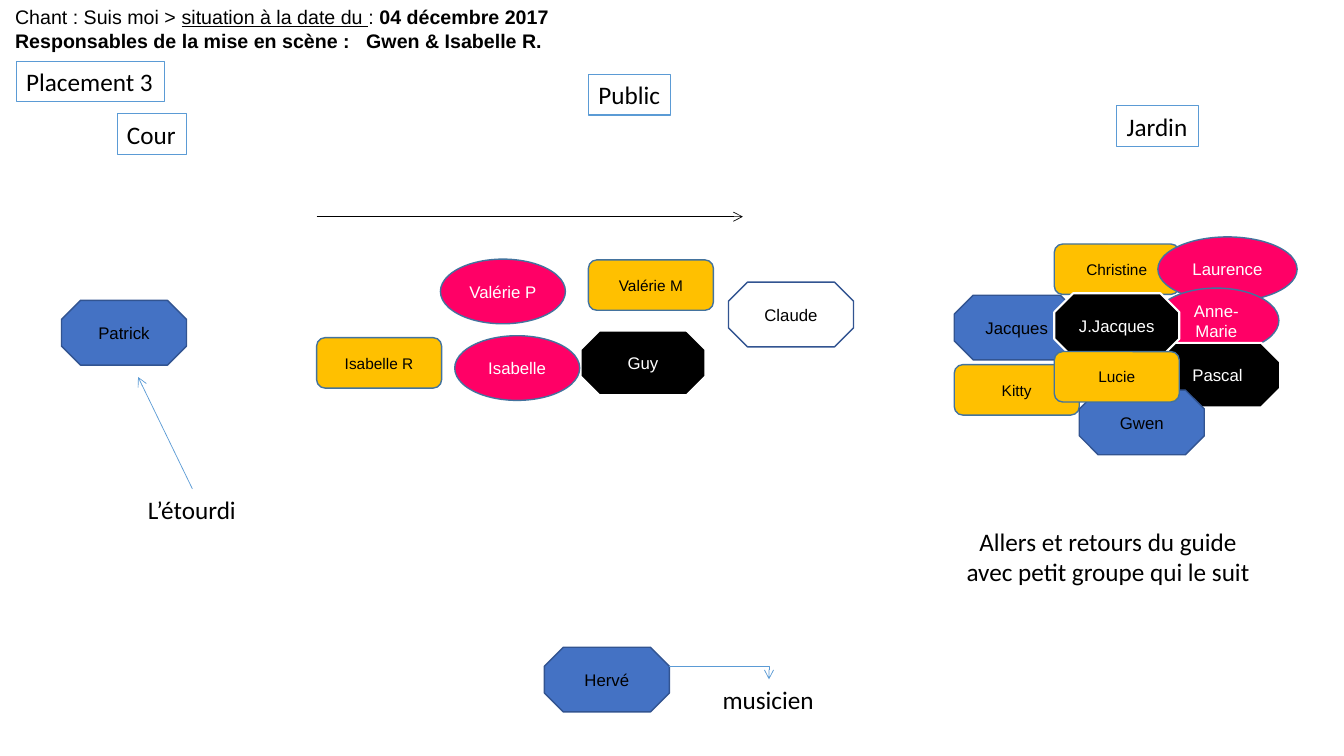
from lxml import etree
from pptx import Presentation
from pptx import util as u
from pptx.dml.color import RGBColor
from pptx.enum import shapes, text
from pptx.oxml import ns

HUES = {
    "blue": "4472C4", "navy": "325491", "steel": "43739E", "sky": "5B9BD5",
    "gold": "FFC000", "pink": "FF0066", "black": "000000", "white": "FFFFFF",
}
FORM = shapes.MSO_SHAPE

# Role: form, fill, line, line width, text colour, text size, width, height
ROLES = {
    "blue": (FORM.OCTAGON, "blue", "navy", 1, "black", 12, 3.15, 1.63),
    "dark": (FORM.OCTAGON, "black", "white", 1.5, "white", 12, 3.15, 1.63),
    "pale": (FORM.OCTAGON, "white", "navy", 1, "black", 12, 3.15, 1.63),
    "gold": (FORM.ROUNDED_RECTANGLE, "gold", "steel", 1, "black", 11, 3.15, 1.27),
    "pink": (FORM.OVAL, "pink", "steel", 1, "white", 12, 3.15, 1.63),
    "wide": (FORM.OVAL, "pink", "steel", 1, "white", 12, 3.51, 1.63),
}

# Singers from back to front: name, role, left, top
CAST = [
    ("Jacques", "blue", 24.05, 7.44),
    ("Guy", "dark", 14.63, 8.33),
    ("Christine", "gold", 26.57, 6.15),
    ("Isabelle", "pink", 11.46, 8.46),
    ("Kitty", "gold", 24.05, 9.19),
    ("Valérie M", "gold", 14.83, 6.55),
    ("Isabelle R", "gold", 7.98, 8.51),
    ("Laurence", "wide", 29.18, 5.97),
    ("Valérie P", "pink", 11.1, 6.53),
    ("Anne-Marie", "pink", 29.08, 7.26),
    ("Pascal", "dark", 29.11, 8.64),
    ("J.Jacques", "dark", 26.57, 7.39),
    ("Patrick", "blue", 1.55, 7.57),
    ("Gwen", "blue", 27.2, 9.83),
    ("Lucie", "gold", 26.57, 8.86),
    ("Claude", "pale", 18.36, 7.11),
    ("Hervé", "blue", 13.72, 16.31),
]

# Framed signs and plain notes: words, left, top, width
SIGNS = [
    ("Placement 3", 0.41, 1.55, 3.73),
    ("Public", 14.83, 1.88, 2.08),
    ("Jardin", 28.14, 2.67, 2.06),
    ("Cour", 2.95, 2.87, 1.75),
]
NOTES = [
    ("L’étourdi", 3.48, 12.32, 2.74),
    ("musicien", 17.96, 17.12, 2.84),
]


def hue(name):
    return RGBColor.from_string(HUES[name])


def add_run(para, words, size, face, tint="black", bold=None, under=None):
    run = para.add_run()
    run.text = words
    font = run.font
    font.size, font.name = u.Pt(size), face
    font.bold, font.underline = bold, under
    font.color.rgb = hue(tint)


def add_box(slide, left, top, width, height, wrap=True):
    box = slide.shapes.add_textbox(u.Cm(left), u.Cm(top), u.Cm(width), u.Cm(height))
    frame = box.text_frame
    frame.word_wrap = wrap
    frame.auto_size = text.MSO_AUTO_SIZE.SHAPE_TO_FIT_TEXT
    return box


def add_note(slide, words, left, top, width, framed=False):
    box = add_box(slide, left, top, width, 1.02, wrap=False)
    add_run(box.text_frame.paragraphs[0], words, 18, "Calibri")
    if framed:
        box.line.color.rgb = hue("sky")
        box.line.width = u.Pt(0.75)


def add_singer(slide, name, role, left, top):
    form, fill, edge, thick, tint, size, width, height = ROLES[role]
    shape = slide.shapes.add_shape(
        form, u.Cm(left), u.Cm(top), u.Cm(width), u.Cm(height))
    shape.shadow.inherit = False
    shape.fill.solid()
    shape.fill.fore_color.rgb = hue(fill)
    shape.line.color.rgb = hue(edge)
    shape.line.width = u.Pt(thick)
    frame = shape.text_frame
    frame.word_wrap = True
    frame.vertical_anchor = text.MSO_ANCHOR.MIDDLE
    para = frame.paragraphs[0]
    para.alignment = text.PP_ALIGN.CENTER
    add_run(para, name, size, "Arial", tint)


def add_arrow(slide, start, end, tint, bent=False):
    kind = shapes.MSO_CONNECTOR.ELBOW if bent else shapes.MSO_CONNECTOR.STRAIGHT
    points = [u.Cm(value) for value in start + end]
    arrow = slide.shapes.add_connector(kind, *points)
    arrow.line.color.rgb = hue(tint)
    arrow.line.width = u.Pt(0.5)
    props = arrow.element.spPr
    etree.SubElement(props.find(ns.qn("a:ln")), ns.qn("a:tailEnd"), type="arrow")
    etree.SubElement(props, ns.qn("a:effectLst"))
    if bent:  # a single corner
        props.find(ns.qn("a:prstGeom")).set("prst", "bentConnector2")


def add_header(slide):
    frame = add_box(slide, 0.13, 0, 28.96, 1.45).text_frame
    song = frame.paragraphs[0]
    add_run(song, "Chant : Suis moi > ", 14, "Arial")
    add_run(song, "situation à la date du ", 14, "Arial", under=True)
    add_run(song, ": ", 14, "Arial")
    add_run(song, "04 décembre 2017", 14, "Arial", bold=True)
    # A tab stop sets the names apart
    staff = frame.add_paragraph()
    add_run(staff, "Responsables de la mise en scène :\tGwen & Isabelle R.",
            14, "Arial", bold=True)
    stops = etree.SubElement(staff._p.get_or_add_pPr(), ns.qn("a:tabLst"))
    etree.SubElement(stops, ns.qn("a:tab"), pos=str(u.Cm(8.85)), algn="l")


def add_guide(slide):
    frame = add_box(slide, 24.05, 13.13, 7.75, 1.8).text_frame
    para = frame.paragraphs[0]
    para.alignment = text.PP_ALIGN.CENTER
    add_run(para, "Allers et retours du guide avec petit groupe qui le suit",
            18, "Calibri")


def main():
    deck = Presentation()
    deck.slide_width, deck.slide_height = u.Cm(33.87), u.Cm(19.05)
    slide = deck.slides.add_slide(deck.slide_layouts[6])

    # Words on the stage
    add_header(slide)
    add_guide(slide)
    for sign in SIGNS:
        add_note(slide, *sign, framed=True)
    for note in NOTES:
        add_note(slide, *note)

    # Singers
    for singer in CAST:
        add_singer(slide, *singer)

    # Moves and pointers
    add_arrow(slide, (7.98, 5.46), (18.72, 5.46), "black")
    add_arrow(slide, (4.85, 12.32), (3.48, 9.5), "sky")
    add_arrow(slide, (16.87, 16.79), (19.38, 17.12), "sky", bent=True)

    deck.save("out.pptx")


if __name__ == "__main__":
    main()
